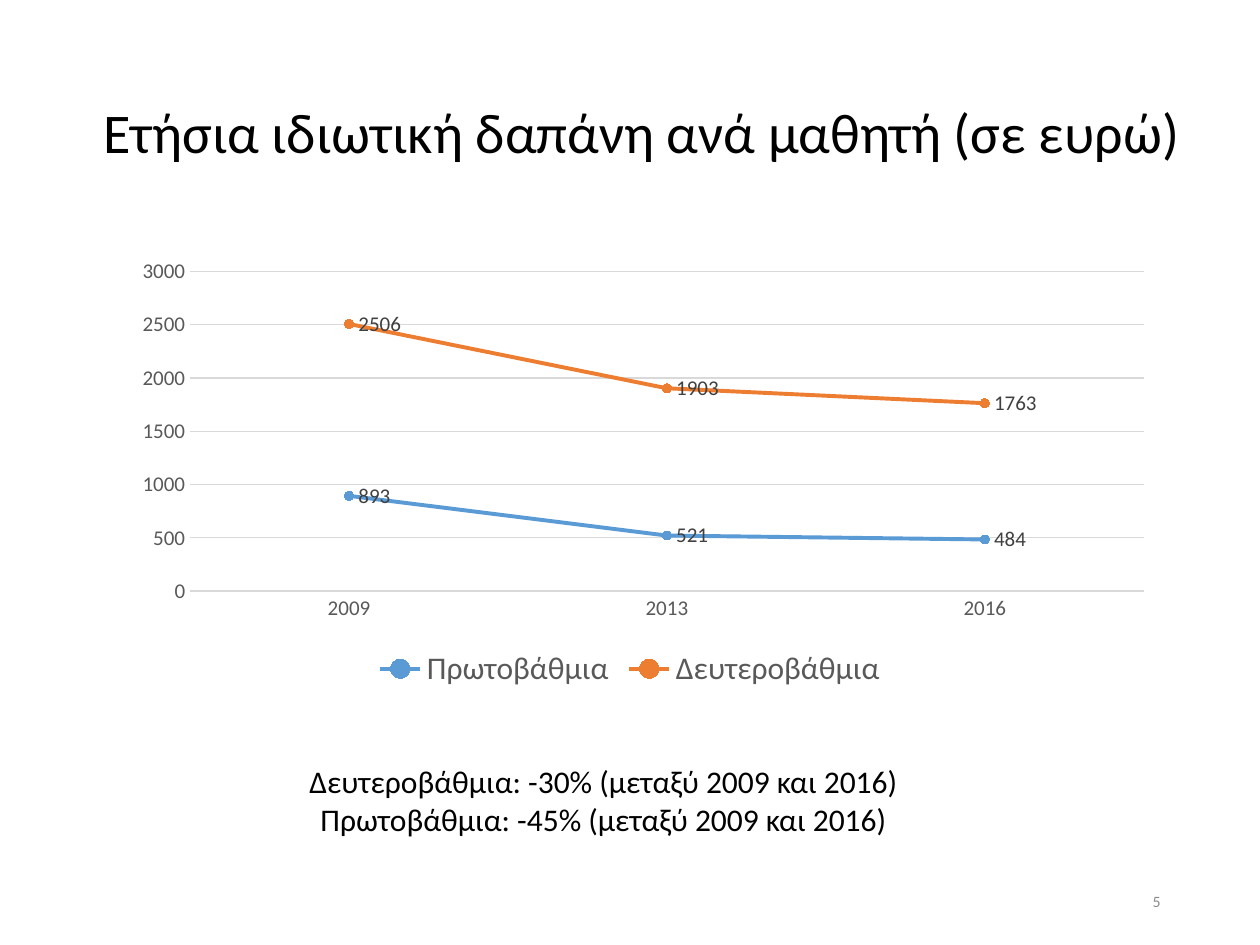
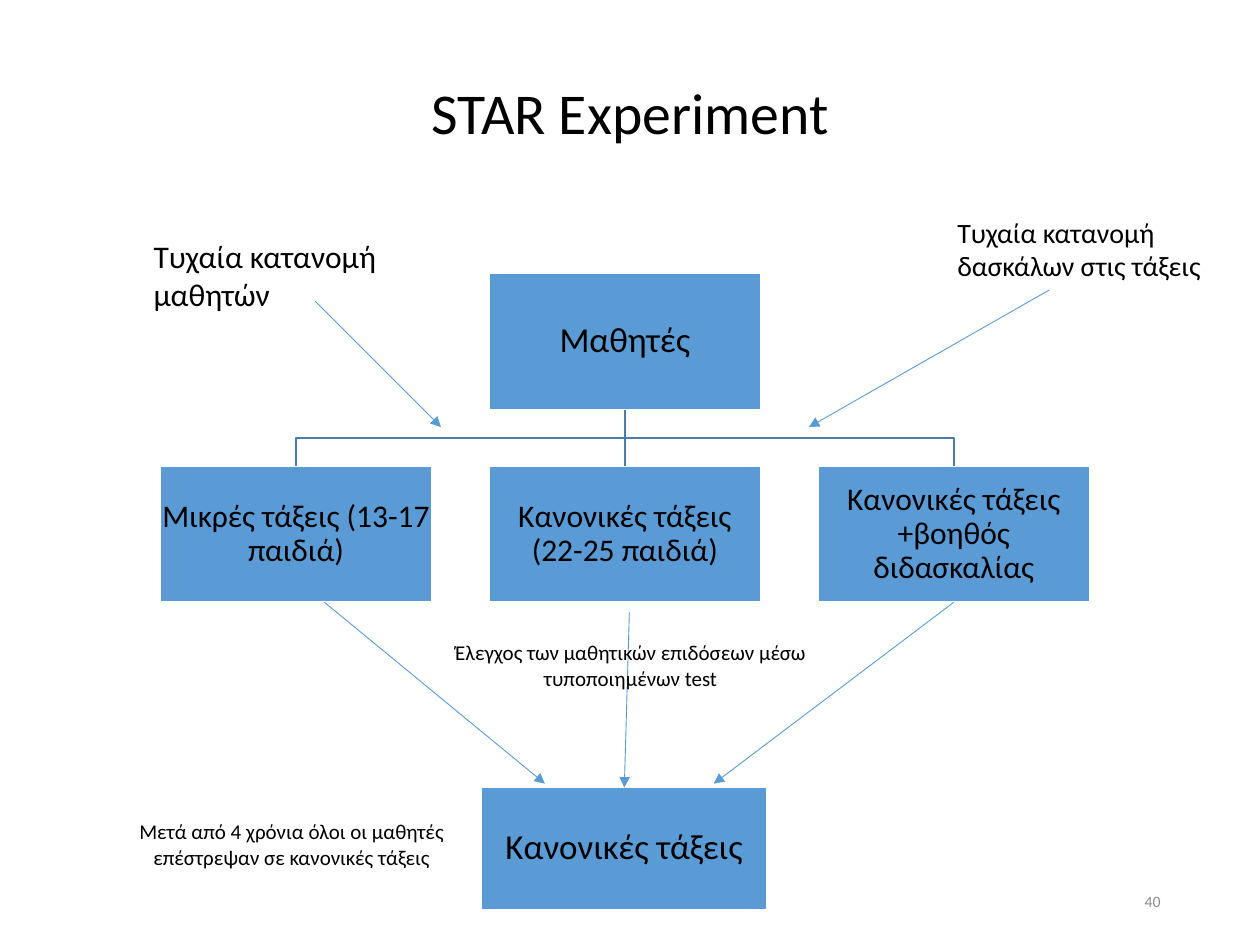
from dataclasses import dataclass

from lxml import etree
from pptx import Presentation
from pptx.chart.data import CategoryChartData
from pptx.dml.color import RGBColor
from pptx.enum.chart import XL_CHART_TYPE, XL_LABEL_POSITION, XL_LEGEND_POSITION, XL_MARKER_STYLE, XL_TICK_MARK
from pptx.enum.shapes import MSO_CONNECTOR, MSO_SHAPE
from pptx.enum.text import MSO_ANCHOR, MSO_AUTO_SIZE, PP_ALIGN
from pptx.oxml.ns import qn
from pptx.util import Inches, Pt

LINE_MARKERS = XL_CHART_TYPE.LINE_MARKERS
LABEL_RIGHT = XL_LABEL_POSITION.RIGHT
LEGEND_BOTTOM = XL_LEGEND_POSITION.BOTTOM
CIRCLE = XL_MARKER_STYLE.CIRCLE
NO_TICK = XL_TICK_MARK.NONE
STRAIGHT = MSO_CONNECTOR.STRAIGHT
RECTANGLE = MSO_SHAPE.RECTANGLE
TOP, MIDDLE = MSO_ANCHOR.TOP, MSO_ANCHOR.MIDDLE
NO_AUTO_SIZE = MSO_AUTO_SIZE.NONE
LEFT, CENTER, RIGHT = PP_ALIGN.LEFT, PP_ALIGN.CENTER, PP_ALIGN.RIGHT
TITLE_ONLY = 5
SIDE_TOP, SIDE_BOTTOM = 0, 2


@dataclass(frozen=True)
class Theme:
    font: str = "Calibri"
    text: str = "000000"
    number: str = "8C8C8C"
    blue: str = "5B9BD5"
    orange: str = "ED7D31"
    tree: str = "497CAB"
    white: str = "FFFFFF"
    grid: str = "D9D9D9"
    axis_text: str = "595959"
    label_text: str = "404040"
    box_size: int = 20
    body_size: int = 18
    side_size: int = 16
    small_size: int = 12
    number_size: int = 9


THEME = Theme()


def color_of(hex_color):
    return RGBColor.from_string(hex_color)


def format_font(font, size, color):
    font.name = THEME.font
    font.size = Pt(size)
    font.color.rgb = color_of(color)


def format_line(line, color, width):
    line.color.rgb = color_of(color)
    line.width = Pt(width)


def write_text(shape, text, size=THEME.body_size, color=THEME.text, align=LEFT,
               anchor=TOP, spacing=1.0, inset=None):
    frame = shape.text_frame
    frame.word_wrap = True
    frame.auto_size = NO_AUTO_SIZE
    frame.vertical_anchor = anchor
    if inset is not None:
        frame.margin_left = frame.margin_right = Inches(inset)
        frame.margin_top = frame.margin_bottom = Inches(inset)
    frame.text = text
    for paragraph in frame.paragraphs:
        paragraph.alignment = align
        paragraph.line_spacing = spacing
        for run in paragraph.runs:
            format_font(run.font, size, color)


def add_text(slide, box, text, **text_format):
    shape = slide.shapes.add_textbox(*map(Inches, box))
    write_text(shape, text, **text_format)


def add_titled_slide(presentation, title, title_box, title_size, number):
    slide = presentation.slides.add_slide(presentation.slide_layouts[TITLE_ONLY])
    placeholder = slide.shapes.title
    placeholder.left, placeholder.top, placeholder.width, placeholder.height = map(Inches, title_box)
    write_text(placeholder, title, size=title_size, align=CENTER, anchor=MIDDLE, spacing=0.9)
    add_text(slide, (7.06, 6.95, 2.25, 0.4), str(number), size=THEME.number_size,
             color=THEME.number, align=RIGHT, anchor=MIDDLE)
    return slide


def add_box(slide, box, text, size=THEME.body_size):
    shape = slide.shapes.add_shape(RECTANGLE, *map(Inches, box))
    shape.shadow.inherit = False
    shape.fill.solid()
    shape.fill.fore_color.rgb = color_of(THEME.blue)
    format_line(shape.line, THEME.white, 1)
    write_text(shape, text, size=size, align=CENTER, anchor=MIDDLE, spacing=0.9, inset=0.01)
    return shape


def add_line(slide, start=(0, 0), end=(0, 0), color=THEME.blue, width=0.5,
             arrow=True, begin_box=None, end_box=None):
    """Draw a line; a given box takes the place of that end's point."""
    line = slide.shapes.add_connector(STRAIGHT, *map(Inches, (*start, *end)))
    if begin_box is not None:
        line.begin_connect(begin_box, SIDE_BOTTOM)
    if end_box is not None:
        line.end_connect(end_box, SIDE_TOP)
    format_line(line.line, color, width)
    if arrow:
        etree.SubElement(line.line._get_or_add_ln(), qn("a:tailEnd"), type="triangle")
    etree.SubElement(line._element.spPr, qn("a:effectLst"))


def add_elbow(slide, parent, child):
    """Draw a right-angled branch from a parent's bottom to a child's top."""
    start_x, start_y = parent.left + parent.width // 2, parent.top + parent.height
    end_x = child.left + child.width // 2
    middle_y = (start_y + child.top) // 2
    builder = slide.shapes.build_freeform(start_x, start_y)
    builder.add_line_segments([(start_x, middle_y), (end_x, middle_y), (end_x, child.top)], close=False)
    branch = builder.convert_to_shape()
    branch.shadow.inherit = False
    branch.fill.background()
    format_line(branch.line, THEME.tree, 1)


def set_plot_layout(chart, x, y, width, height):
    plot_area = chart._chartSpace.chart.plotArea
    for layout in plot_area.findall(qn("c:layout")):
        plot_area.remove(layout)
    layout = etree.Element(qn("c:layout"))
    plot_area.insert(0, layout)
    manual = etree.SubElement(layout, qn("c:manualLayout"))
    settings = {"layoutTarget": "inner", "xMode": "edge", "yMode": "edge",
                "x": x, "y": y, "w": width, "h": height}
    for name, value in settings.items():
        etree.SubElement(manual, qn(f"c:{name}"), val=str(value))


def format_axes(chart):
    for axis in (chart.category_axis, chart.value_axis):
        axis.major_tick_mark = axis.minor_tick_mark = NO_TICK
        format_font(axis.tick_labels.font, THEME.small_size, THEME.axis_text)
    format_line(chart.category_axis.format.line, THEME.grid, 0.75)
    value_axis = chart.value_axis
    value_axis.minimum_scale, value_axis.maximum_scale, value_axis.major_unit = 0, 3000, 500
    value_axis.format.line.fill.background()
    format_line(value_axis.major_gridlines.format.line, THEME.grid, 0.75)


def format_series(series, color):
    series.smooth = False
    format_line(series.format.line, color, 2.25)
    marker = series.marker
    marker.style, marker.size = CIRCLE, 5
    marker.format.fill.solid()
    marker.format.fill.fore_color.rgb = color_of(color)
    format_line(marker.format.line, color, 0.75)
    labels = series.data_labels
    labels.show_value = True
    labels.position = LABEL_RIGHT
    format_font(labels.font, THEME.small_size, THEME.label_text)


def add_spending_chart(slide, box):
    data = CategoryChartData()
    data.categories = ["2009", "2013", "2016"]
    data.add_series("Πρωτοβάθμια", (893, 521, 484))
    data.add_series("Δευτεροβάθμια", (2506, 1903, 1763))
    chart = slide.shapes.add_chart(LINE_MARKERS, *map(Inches, box), data).chart
    chart.has_title = False
    format_font(chart.font, THEME.small_size, THEME.text)
    chart.has_legend = True
    chart.legend.position = LEGEND_BOTTOM
    chart.legend.include_in_layout = False
    format_font(chart.legend.font, THEME.body_size, THEME.axis_text)
    format_axes(chart)
    chart.plots[0].vary_by_categories = False
    for series, color in zip(chart.plots[0].series, (THEME.blue, THEME.orange)):
        format_series(series, color)
    set_plot_layout(chart, 0.095, 0.126, 0.878, 0.661)


def add_class_tree(slide, box):
    """Place the pupils box over three class types and return the class boxes."""
    left, top, width, height = box
    box_width, box_height = 2.16, 1.08
    step = (width - box_width) / 2
    pupils = add_box(slide, (left + step, top, box_width, box_height), "Μαθητές", THEME.box_size)
    class_names = ("Μικρές τάξεις (13-17 παιδιά)", "Κανονικές τάξεις (22-25 παιδιά)",
                   "Κανονικές τάξεις +βοηθός διδασκαλίας")
    classes = [add_box(slide, (left + column * step, top + height - box_height, box_width, box_height), name)
               for column, name in enumerate(class_names)]
    small, regular, assisted = classes
    add_elbow(slide, pupils, small)
    add_elbow(slide, pupils, assisted)
    add_line(slide, color=THEME.tree, width=1, arrow=False, begin_box=pupils, end_box=regular)
    return classes


def add_return_to_regular(slide, box, assisted):
    """Place the final box and the arrows that lead down to it."""
    left, top, width, _ = box
    final = add_box(slide, box, "Κανονικές τάξεις", THEME.box_size)
    center, tip = left + width / 2, top - 0.03
    add_line(slide, (center - 2.38, top - 1.47), (center - 0.63, tip))
    add_line(slide, end=(center + 0.71, tip), begin_box=assisted)
    add_line(slide, (center + 0.04, top - 1.39), end_box=final)


def build_spending_slide(presentation):
    slide = add_titled_slide(presentation, "Ετήσια ιδιωτική δαπάνη ανά μαθητή (σε ευρώ)",
                             (0.69, 0.4, 8.81, 1.35), 32, 5)
    add_spending_chart(slide, (0.69, 1.67, 8.62, 3.84))
    add_text(slide, (1, 6, 7.58, 0.71),
             "Δευτεροβάθμια: -30% (μεταξύ 2009 και 2016)\nΠρωτοβάθμια: -45% (μεταξύ 2009 και 2016)",
             align=CENTER)


def build_experiment_slide(presentation):
    slide = add_titled_slide(presentation, "STAR Experiment", (0.69, 0.4, 8.62, 1.04), 33, 40)
    assisted = add_class_tree(slide, (1.27, 2.17, 7.38, 2.61))[-1]
    add_return_to_regular(slide, (3.82, 6.25, 2.27, 0.97), assisted)
    add_line(slide, (2.5, 2.39), (3.5, 3.39))
    add_line(slide, (8.33, 2.3), (6.42, 3.39))
    add_text(slide, (1.12, 1.83, 2.08, 0.71), "Τυχαία κατανομή μαθητών")
    add_text(slide, (7.5, 1.66, 2.33, 0.64), "Τυχαία κατανομή δασκάλων στις τάξεις", size=THEME.side_size)
    add_text(slide, (3.38, 5.03, 3.25, 0.5), "Έλεγχος των μαθητικών επιδόσεων μέσω τυποποιημένων test",
             size=THEME.small_size, align=CENTER)
    add_text(slide, (0.69, 6.45, 3.25, 0.5), "Μετά από 4 χρόνια όλοι οι μαθητές επέστρεψαν σε κανονικές τάξεις",
             size=THEME.small_size, align=CENTER)


def main():
    presentation = Presentation()
    presentation.slide_width, presentation.slide_height = Inches(10), Inches(7.5)
    build_spending_slide(presentation)
    build_experiment_slide(presentation)
    presentation.save("out.pptx")


if __name__ == "__main__":
    main()
